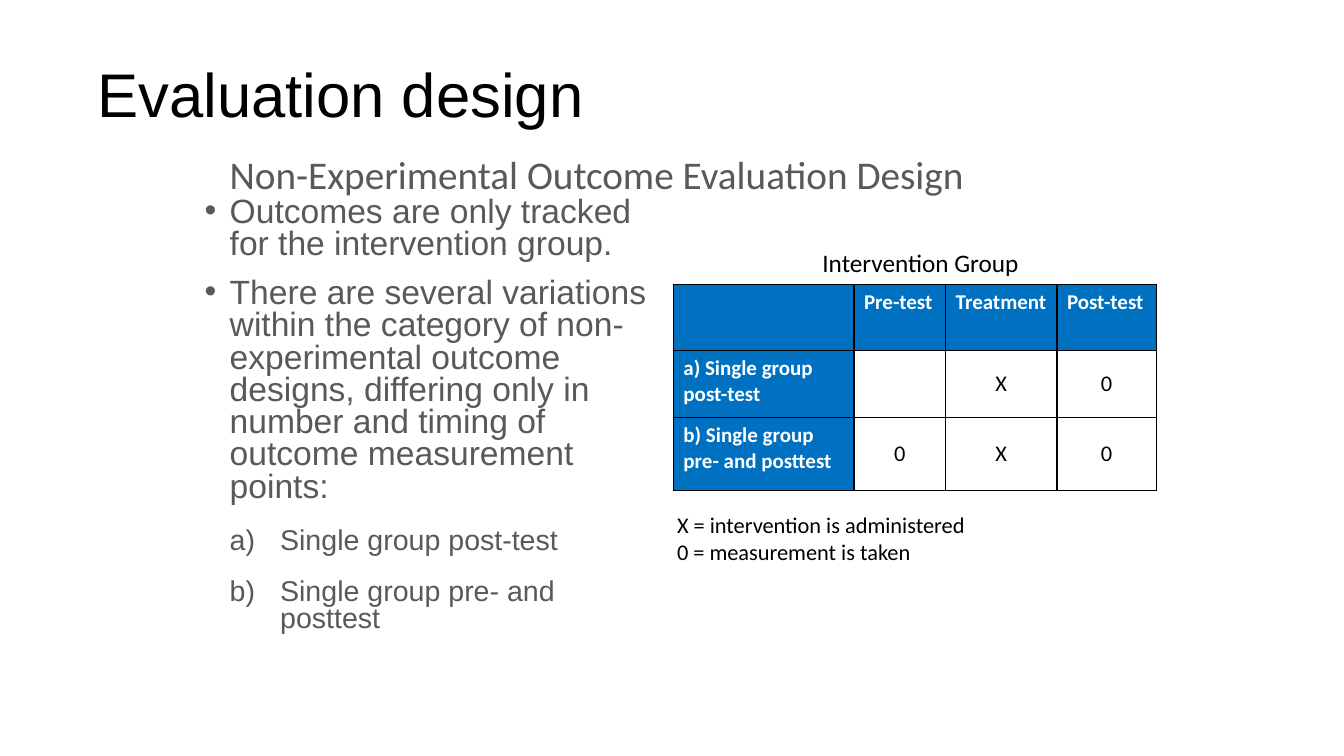
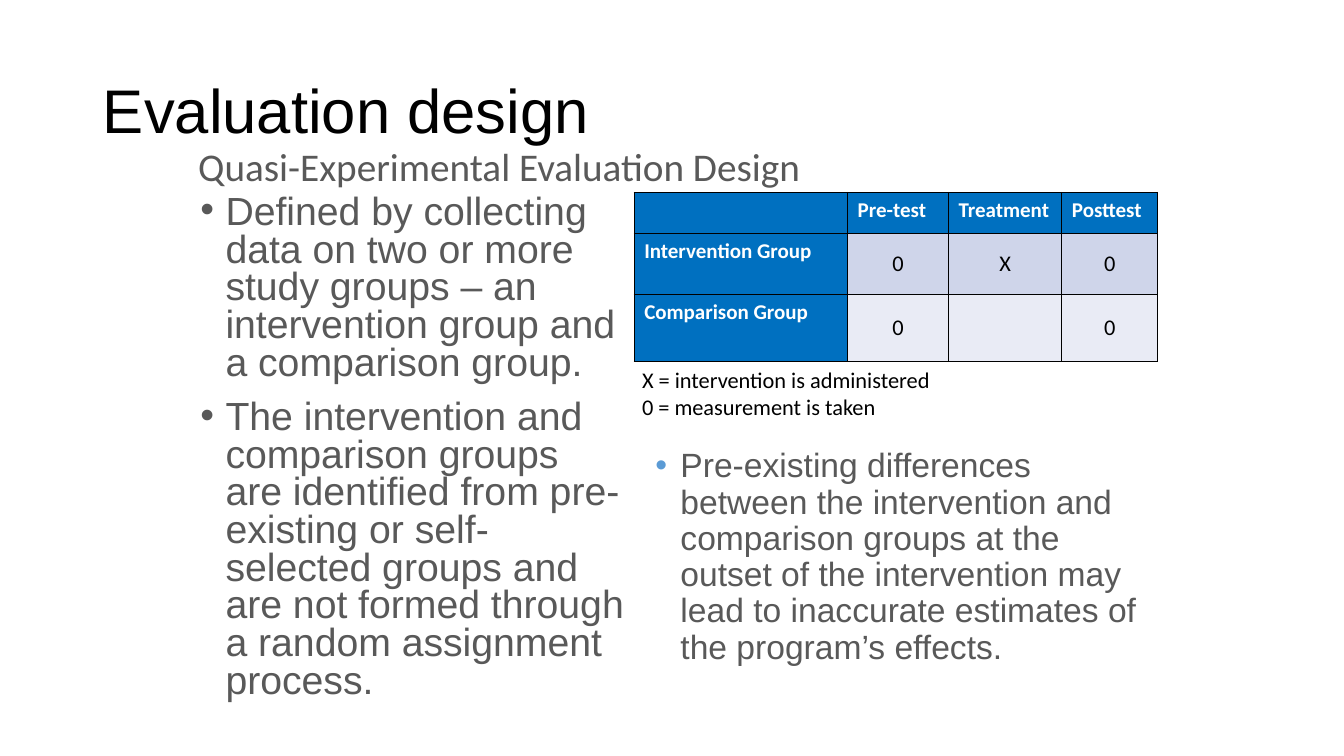
from pptx import Presentation
from pptx.dml.color import RGBColor
from pptx.enum.text import MSO_ANCHOR, PP_ALIGN
from pptx.oxml.ns import qn
from pptx.util import Pt
from lxml.etree import SubElement

BLACK = RGBColor(0x00, 0x00, 0x00)
WHITE = RGBColor(0xFF, 0xFF, 0xFF)
GRAY = RGBColor(0x59, 0x59, 0x59)
BLUE = RGBColor(0x00, 0x70, 0xC0)
LIGHT_BLUE = RGBColor(0x5B, 0x9B, 0xD5)
BAND_DARK = RGBColor(0xCF, 0xD5, 0xEA)
BAND_LIGHT = RGBColor(0xE9, 0xEB, 0xF5)

TITLE = dict(size=44, font="Arial", color=BLACK, spacing=0.9)
SUBTITLE = dict(size=28, font="Calibri", color=GRAY, spacing=0.9, before=10)
CAPTION = dict(size=18, font="Calibri", color=BLACK, align=PP_ALIGN.CENTER)
LEGEND = dict(size=16, font="Calibri", color=BLACK)
HEADING = dict(size=15, font="Calibri", color=WHITE, bold=True)
MARK = dict(size=16, font="Calibri", color=BLACK, align=PP_ALIGN.CENTER)
BULLET = dict(size=24, font="Arial", color=GRAY, spacing=0.8, after=12,
              marker=("a:buChar", "char", "•"), margin=18, hanging=18)
LARGE_BULLET = {**BULLET, "size": 28}
NOTE_BULLET = {**BULLET, "spacing": 0.9, "marker_color": LIGHT_BLUE}
LETTERED = {**BULLET, "size": 20.4, "before": 5, "margin": 54, "hanging": 36,
            "marker": ("a:buAutoNum", "type", "alphaLcParenR")}

LEGEND_LINES = ["X = intervention is administered", "0 = measurement is taken"]


def write(frame, lines, anchor=MSO_ANCHOR.TOP):
    frame.word_wrap = True
    frame.vertical_anchor = anchor
    for number, (text, style) in enumerate(lines):
        para = frame.add_paragraph() if number else frame.paragraphs[0]
        para.alignment = style.get("align", PP_ALIGN.LEFT)
        para.line_spacing = style.get("spacing", 1.0)
        para.space_before = Pt(style.get("before", 0))
        para.space_after = Pt(style.get("after", 0))
        if "marker" in style:
            properties = para._p.get_or_add_pPr()
            properties.set("marL", str(Pt(style["margin"])))
            properties.set("indent", str(-Pt(style["hanging"])))
            if "marker_color" in style:
                color = SubElement(properties, qn("a:buClr"))
                SubElement(color, qn("a:srgbClr"), val=str(style["marker_color"]))
            SubElement(properties, qn("a:buFont"), typeface="Arial")
            tag, attribute, value = style["marker"]
            SubElement(properties, qn(tag)).set(attribute, value)
        span = para.add_run()
        span.text = text
        span.font.size = Pt(style["size"])
        span.font.name = style["font"]
        span.font.bold = style.get("bold", False)
        span.font.color.rgb = style["color"]


def add_design_table(page, left, top, widths, heights, rows, bands):
    frame = page.shapes.add_table(len(heights), len(widths), Pt(left), Pt(top),
                                  Pt(sum(widths)), Pt(sum(heights)))
    table = frame.table
    table.first_row = table.horz_banding = False
    for column, width in zip(table.columns, widths):
        column.width = Pt(width)
    for row, height in zip(table.rows, heights):
        row.height = Pt(height)
    for r, texts in enumerate(rows):
        for c, text in enumerate(texts):
            cell = table.cell(r, c)
            for side in ("a:lnL", "a:lnR", "a:lnT", "a:lnB"):
                border = SubElement(cell._tc.get_or_add_tcPr(), qn(side), w=str(Pt(1)))
                paint = SubElement(border, qn("a:solidFill"))
                SubElement(paint, qn("a:srgbClr"), val=str(BLACK))
            is_heading = r == 0 or c == 0
            color = BLUE if is_heading else bands[r - 1]
            if color is None:
                cell.fill.background()
            else:
                cell.fill.solid()
                cell.fill.fore_color.rgb = color
            if text:
                write(cell.text_frame, [(text, HEADING if is_heading else MARK)])
                cell.vertical_anchor = MSO_ANCHOR.TOP if is_heading else MSO_ANCHOR.MIDDLE


slides = [
    dict(
        table=dict(
            left=481, top=203, widths=[129, 65.5, 79.5, 71], heights=[47.5, 48, 52],
            rows=[["", "Pre-test", "Treatment", "Post-test"],
                  ["a) Single group post-test", "", "X", "0"],
                  ["b) Single group pre- and posttest", "0", "X", "0"]],
            bands=[None, None]),
        title=(62.5, 17.5),
        subtitle=(157, 94.5, "Non-Experimental Outcome Evaluation Design"),
        legend=(476.5, 361.5),
        texts=[
            (139, 137.5, 330.5, 341, [
                ("Outcomes are only tracked for the intervention group.", BULLET),
                ("There are several variations within the category of non-experimental "
                 "outcome designs, differing only in number and timing of outcome "
                 "measurement points:", BULLET),
                ("Single group post-test", LETTERED),
                ("Single group pre- and posttest", LETTERED)]),
            (577.5, 173, 160, 29, [("Intervention Group", CAPTION)]),
        ]),
    dict(
        table=dict(
            left=453, top=137.5, widths=[152.5, 72, 81, 68.5], heights=[29.5, 43.5, 48],
            rows=[["", "Pre-test", "Treatment", "Posttest"],
                  ["Intervention Group", "0", "X", "0"],
                  ["Comparison Group", "0", "", "0"]],
            bands=[BAND_DARK, BAND_LIGHT]),
        title=(66.5, 29),
        subtitle=(134.5, 88.5, "Quasi-Experimental Evaluation Design"),
        legend=(451.5, 258),
        texts=[
            (136, 136, 317, 382, [
                ("Defined by collecting data on two or more study groups – an "
                 "intervention group and a comparison group.", LARGE_BULLET),
                ("The intervention and comparison groups are identified from "
                 "pre-existing or self-selected groups and are not formed through "
                 "a random assignment process.", LARGE_BULLET)]),
            (461, 317, 366, 175, [
                ("Pre-existing differences between the intervention and comparison "
                 "groups at the outset of the intervention may lead to inaccurate "
                 "estimates of the program’s effects.", NOTE_BULLET)]),
        ]),
]

deck = Presentation()
deck.slide_width, deck.slide_height = Pt(960), Pt(540)

for content in slides:
    page = deck.slides.add_slide(deck.slide_layouts[6])
    add_design_table(page, **content["table"])

    box = page.shapes.add_textbox(*map(Pt, content["title"]), Pt(828), Pt(104.5))
    write(box.text_frame, [("Evaluation design", TITLE)], MSO_ANCHOR.MIDDLE)

    left, top, subtitle = content["subtitle"]
    box = page.shapes.add_textbox(Pt(left), Pt(top), Pt(657.5), Pt(50.5))
    write(box.text_frame, [(subtitle, SUBTITLE)], MSO_ANCHOR.BOTTOM)

    for *place, lines in content["texts"]:
        box = page.shapes.add_textbox(*map(Pt, place))
        write(box.text_frame, lines)

    box = page.shapes.add_textbox(*map(Pt, content["legend"]), Pt(320.5), Pt(46))
    write(box.text_frame, [(line, LEGEND) for line in LEGEND_LINES])

deck.save("out.pptx")
